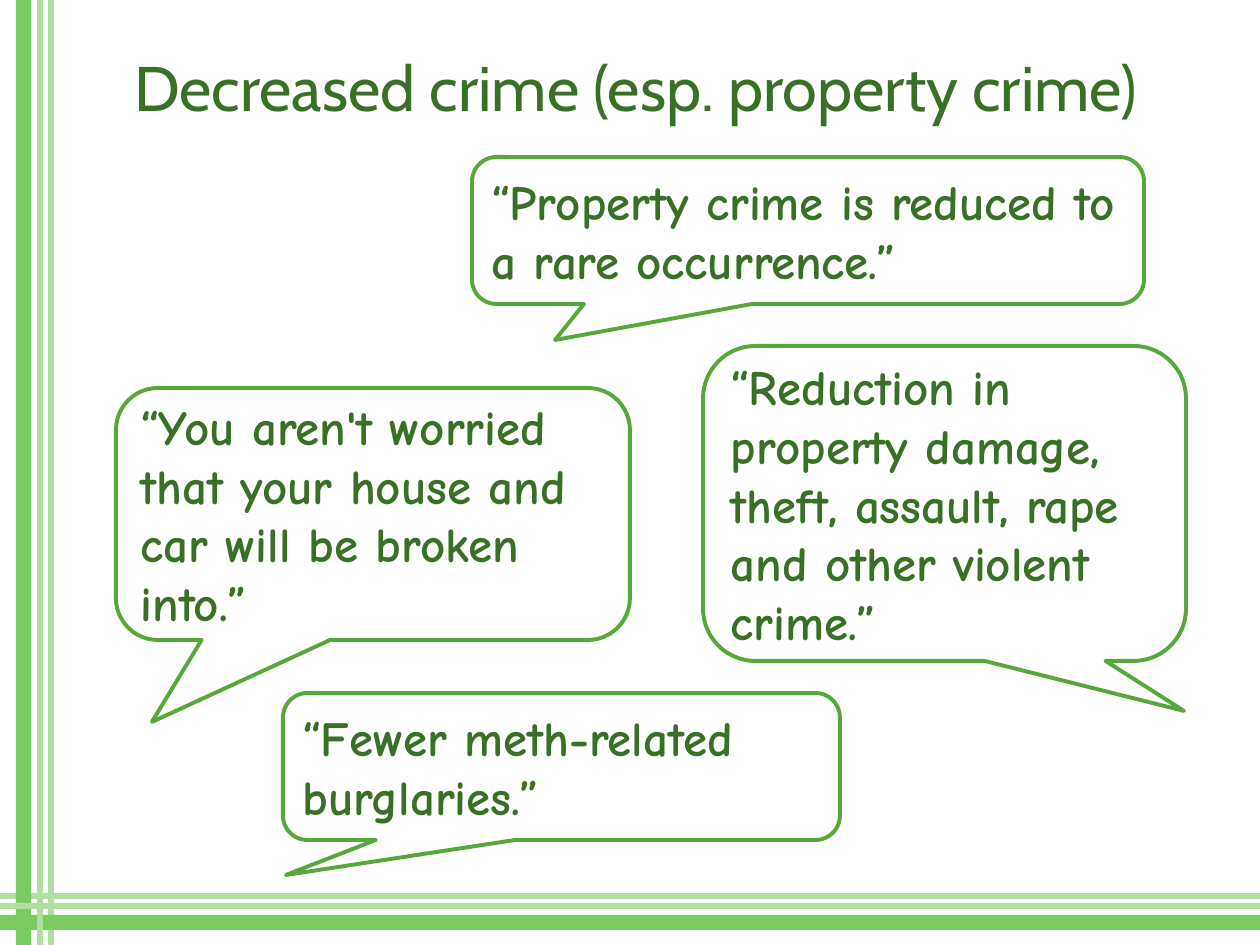
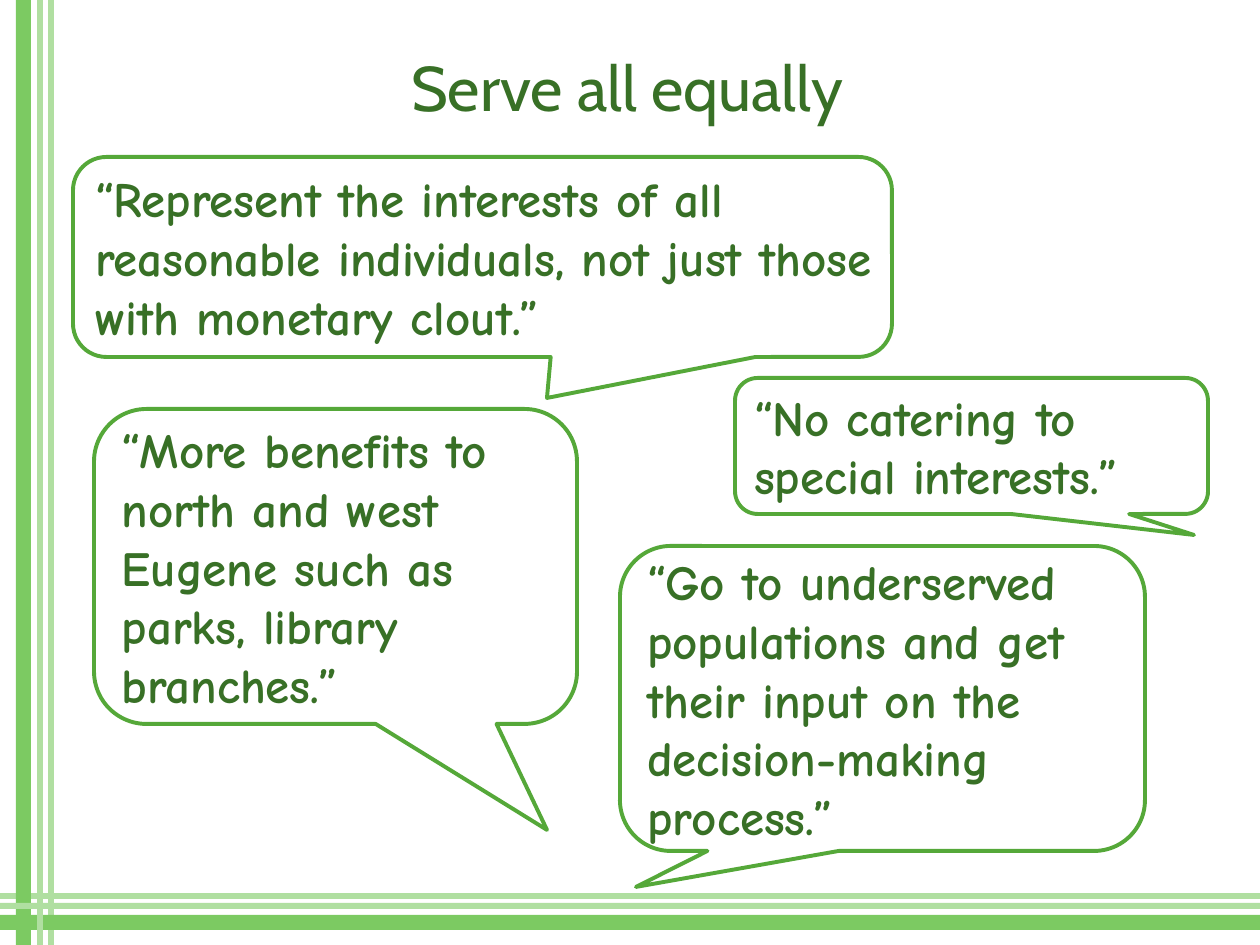
from dataclasses import dataclass

from pptx import Presentation
from pptx.dml.color import RGBColor
from pptx.enum.shapes import MSO_SHAPE
from pptx.enum.text import MSO_ANCHOR, PP_ALIGN
from pptx.util import Inches, Pt

RECT = MSO_SHAPE.RECTANGLE
BUBBLE = MSO_SHAPE.ROUNDED_RECTANGULAR_CALLOUT
LEFT, CENTER = PP_ALIGN.LEFT, PP_ALIGN.CENTER
MIDDLE = MSO_ANCHOR.MIDDLE

WIDE, HIGH = 1260, 945
TITLE_ONLY = 5


def px(num):
    return round(num * 914400 / 126)


def rgb(code):
    return RGBColor.from_string(code)


@dataclass(frozen=True)
class Theme:
    paper: RGBColor = rgb("FFFFFF")
    pale: RGBColor = rgb("B0DFA1")
    green: RGBColor = rgb("7CCA62")
    edge: RGBColor = rgb("55A839")
    ink: RGBColor = rgb("387026")
    head: str = "Cabin"
    hand: str = "Comic Neue"
    head_size: Pt = Pt(36)
    hand_size: Pt = Pt(28)
    stroke: Pt = Pt(2.25)


class Deck:
    """Holds the style and the slide now being drawn."""

    def __init__(self, theme):
        self.theme = theme
        self.show = Presentation()
        self.show.slide_width, self.show.slide_height = px(WIDE), px(HIGH)
        self.slide = None

    def start(self, title, left, width):
        layout = self.show.slide_layouts[TITLE_ONLY]
        self.slide = self.show.slides.add_slide(layout)
        self.bands()
        self.title(title, left, width)

    def shape(self, kind, box, fill):
        item = self.slide.shapes.add_shape(kind, *map(px, box))
        item.shadow.inherit = False
        item.fill.solid()
        item.fill.fore_color.rgb = fill
        item.line.fill.background()
        return item

    def bands(self):
        """Draw the bars that cross at the lower left, back to front."""
        pale, green = self.theme.pale, self.theme.green
        for across, start, thick, color in (
            (True, 893, 6, pale),
            (False, 48, 6, pale),
            (True, 915, 15, green),
            (False, 16, 15, green),
            (False, 37, 6, pale),
            (True, 903, 6, pale),
        ):
            box = (0, start, WIDE, thick) if across else (start, 0, thick, HIGH)
            self.shape(RECT, box, color)

    def label(self, frame, text, face, size, align, bold=False):
        frame.text = text
        frame.word_wrap = True
        frame.vertical_anchor = MIDDLE
        for para in frame.paragraphs:
            para.alignment = align
            for run in para.runs:
                font = run.font
                font.name, font.size, font.bold = face, size, bold
                font.color.rgb = self.theme.ink

    def title(self, text, left, width):
        item = self.slide.shapes.title
        item.left, item.top = px(left), px(42)
        item.width, item.height = px(width), px(89)
        self.label(item.text_frame, text, self.theme.head,
                   self.theme.head_size, CENTER)

    def quote(self, text, box, tip):
        """Draw a speech bubble whose tail ends at the point tip."""
        left, top, width, height = box
        item = self.shape(BUBBLE, box, self.theme.paper)
        item.adjustments[0] = (tip[0] - left) / width - 0.5
        item.adjustments[1] = (tip[1] - top) / height - 0.5
        item.line.color.rgb = self.theme.edge
        item.line.width = self.theme.stroke
        frame = item.text_frame
        frame.margin_left = Inches(0.1)
        frame.margin_top = frame.margin_right = frame.margin_bottom = 0
        self.label(frame, f"“{text}”", self.theme.hand,
                   self.theme.hand_size, LEFT, bold=True)


SLIDES = (
    ("Decreased crime (esp. property crime)", 53, 1165, (
        ("You aren't worried that your house and car will be broken into.",
         (116, 388, 514, 252), (152, 722)),
        ("Property crime is reduced to a rare occurrence.",
         (472, 157, 672, 147), (555, 340)),
        ("Fewer meth-related burglaries.",
         (283, 693, 557, 147), (286, 875)),
        ("Reduction in property damage, theft, assault, rape "
         "and other violent crime.",
         (703, 346, 483, 315), (1184, 711)),
    )),
    ("Serve all equally", 199, 856, (
        ("Represent the interests of all reasonable individuals, "
         "not just those with monetary clout.",
         (73, 157, 819, 200), (547, 398)),
        ("No catering to special interests.",
         (735, 378, 473, 136), (1194, 535)),
        ("More benefits to north and west Eugene such as parks, "
         "library branches.",
         (94, 409, 483, 315), (547, 830)),
        ("Go to underserved populations and get their input "
         "on the decision-making process.",
         (620, 546, 525, 305), (636, 887)),
    )),
)


def main():
    deck = Deck(Theme())
    for title, left, width, quotes in SLIDES:
        deck.start(title, left, width)
        for text, box, tip in quotes:
            deck.quote(text, box, tip)
    deck.show.save("out.pptx")


if __name__ == "__main__":
    main()
